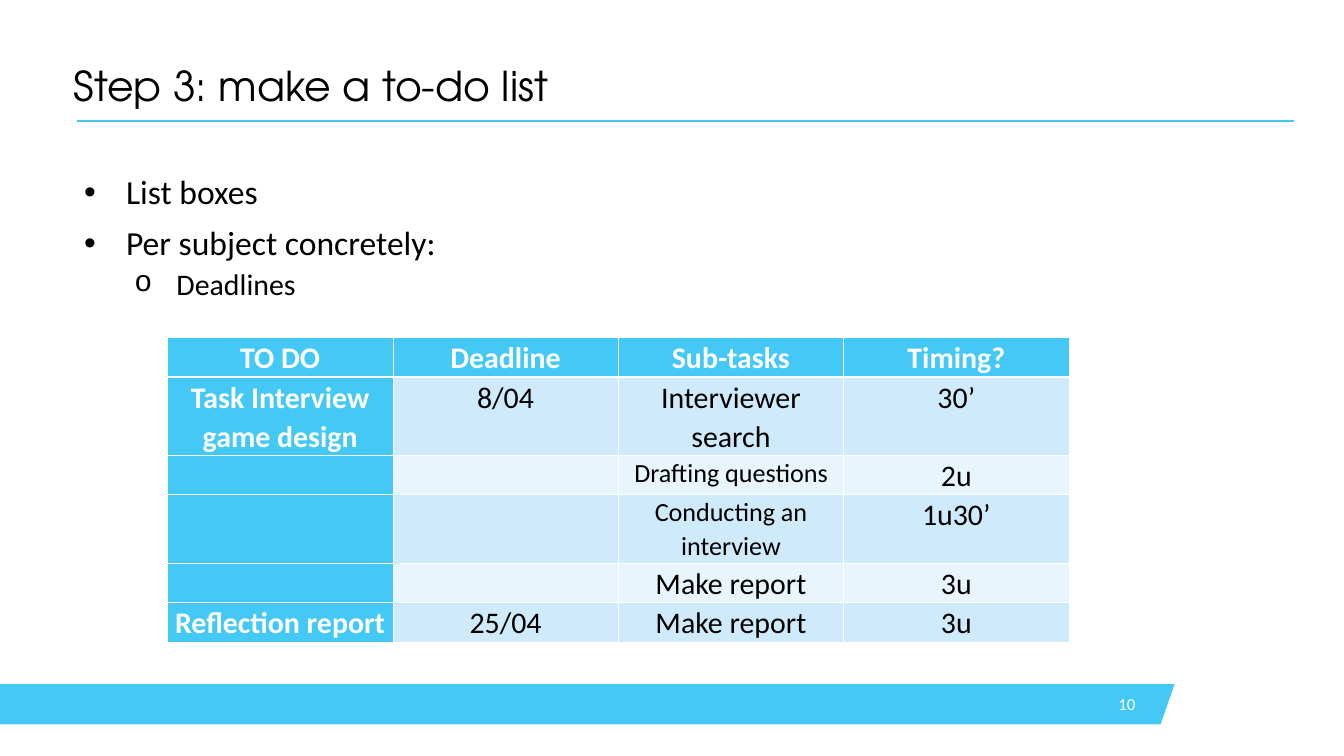
import pptx
import pptx.util
import pptx.dml.color
import pptx.enum.shapes
import pptx.enum.text
import pptx.oxml
import pptx.oxml.ns
from lxml import etree

Pt = pptx.util.Pt
PP_ALIGN = pptx.enum.text.PP_ALIGN
ANCHOR = pptx.enum.text.MSO_ANCHOR
COLORS = {"accent": "44C8F5", "band_dark": "CFEBFB", "band_light": "E9F5FD",
          "text": "000000", "white": "FFFFFF"}
BODY_FONT = "Calibri"
TITLE_FONT = "TeX Gyre Adventor"
BULLETS = [("List boxes", 0), ("Per subject concretely:", 0), ("Deadlines", 1)]
TODO = [
    ["TO DO", "Deadline", "Sub-tasks", "Timing?"],
    ["Task Interview game design", "8/04", "Interviewer search", "30’"],
    ["", "", "Drafting questions", "2u"],
    ["", "", "Conducting an interview", "1u30’"],
    ["", "", "Make report", "3u"],
    ["Reflection report", "25/04", "Make report", "3u"],
]
ROW_HEIGHTS = [42, 84, 42, 74, 42, 42]
COL_WIDTH = 241.5
SMALL_CELLS = {(2, 2), (3, 2)}


def rgb(name):
    return pptx.dml.color.RGBColor.from_string(COLORS[name])


def add_run(p, text, size, color="text", font=BODY_FONT, bold=False):
    r = p.add_run()
    r.text = text
    r.font.name = font
    r.font.size = Pt(size)
    r.font.bold = bold
    r.font.color.rgb = rgb(color)


def add_title(s, text):
    sp = s.shapes.title
    sp.left, sp.top, sp.width, sp.height = Pt(78.5), Pt(70), Pt(1305), Pt(50)
    tf = sp.text_frame
    tf.margin_left = tf.margin_top = tf.margin_right = tf.margin_bottom = 0
    tf.auto_size = pptx.enum.text.MSO_AUTO_SIZE.NONE
    tf.vertical_anchor = ANCHOR.MIDDLE
    p = tf.paragraphs[0]
    p.alignment = PP_ALIGN.LEFT
    p.line_spacing = 0.9
    add_run(p, text, 44, font=TITLE_FONT)


def add_rule(s):
    line = s.shapes.add_connector(pptx.enum.shapes.MSO_CONNECTOR.STRAIGHT,
                                  Pt(82), Pt(129.6), Pt(1386), Pt(129.6))
    line.line.color.rgb = rgb("accent")
    line.line.width = Pt(2.25)
    etree.SubElement(line._element.spPr, pptx.oxml.ns.qn("a:effectLst"))


def add_footer_band(s):
    top, bottom = Pt(733), Pt(776)
    fb = s.shapes.build_freeform(0, top)
    fb.add_line_segments([(Pt(1258.5), top), (Pt(1243.5), bottom), (0, bottom)])
    sp = fb.convert_to_shape()
    sp.shadow.inherit = False
    sp.fill.solid()
    sp.fill.fore_color.rgb = rgb("accent")
    sp.line.fill.background()


def add_text_box(s, left, top, width, height):
    tf = s.shapes.add_textbox(Pt(left), Pt(top), Pt(width), Pt(height)).text_frame
    tf.word_wrap = True
    return tf


def add_bullets(s, items):
    tf = add_text_box(s, 83, 185, 1305, 150)
    for i, (text, level) in enumerate(items):
        p = tf.paragraphs[0] if i == 0 else tf.add_paragraph()
        p.level = level
        p.line_spacing = 0.9
        p.space_before = Pt(0 if i == 0 else (15, 7.5)[level])
        pPr = p._p.get_or_add_pPr()
        pPr.set("marL", str(Pt((45, 99)[level])))
        pPr.set("indent", str(Pt(-45)))
        font = etree.SubElement(pPr, pptx.oxml.ns.qn("a:buFont"))
        font.set("typeface", ("Arial", "Courier New")[level])
        bullet = etree.SubElement(pPr, pptx.oxml.ns.qn("a:buChar"))
        bullet.set("char", "•o"[level])
        add_run(p, text, (36, 32)[level])


def add_page_number(s, text):
    tf = add_text_box(s, 1145, 733, 78.5, 43)
    tf.vertical_anchor = ANCHOR.MIDDLE
    p = tf.paragraphs[0]
    p.alignment = PP_ALIGN.RIGHT
    add_run(p, text, 18, "white")


def set_borders(cell, widths):
    tcPr = cell._tc.get_or_add_tcPr()
    for side, width in widths.items():
        ln = etree.SubElement(tcPr, pptx.oxml.ns.qn(f"a:ln{side}"), w=str(Pt(width)))
        fill = etree.SubElement(ln, pptx.oxml.ns.qn("a:solidFill"))
        etree.SubElement(fill, pptx.oxml.ns.qn("a:srgbClr"), val=COLORS["white"])


def format_cell(cell, text, row, col):
    heading = row == 0 or col == 0
    set_borders(cell, {"L": 1, "R": 1, "T": 3 if row == 1 else 1, "B": 3 if row == 0 else 1})
    cell.fill.solid()
    band = "band_dark" if row % 2 else "band_light"
    cell.fill.fore_color.rgb = rgb("accent" if heading else band)
    cell.margin_left = cell.margin_right = Pt(5)
    cell.margin_top = cell.margin_bottom = 0
    if text:
        p = cell.text_frame.paragraphs[0]
        p.alignment = PP_ALIGN.CENTER
        p.line_spacing = 1.07
        p.space_after = Pt(8)
        size = 28 if (row, col) in SMALL_CELLS else 32
        add_run(p, text, size, "white" if heading else "text", bold=heading)


def add_todo_table(s):
    cols = len(TODO[0])
    frame = s.shapes.add_table(len(TODO), cols, Pt(179.5), Pt(362),
                               Pt(COL_WIDTH * cols), Pt(sum(ROW_HEIGHTS)))
    table = frame.table
    table.first_col = True
    for column in table.columns:
        column.width = Pt(COL_WIDTH)
    for i, (height, texts) in enumerate(zip(ROW_HEIGHTS, TODO)):
        table.rows[i].height = Pt(height)
        for j, text in enumerate(texts):
            format_cell(table.cell(i, j), text, i, j)


def main():
    prs = pptx.Presentation()
    prs.slide_width, prs.slide_height = Pt(1440), Pt(810)
    s = prs.slides.add_slide(prs.slide_layouts[5])
    add_footer_band(s)
    add_rule(s)
    add_title(s, "Step 3: make a to-do list")
    add_bullets(s, BULLETS)
    add_page_number(s, "10")
    add_todo_table(s)
    prs.save("out.pptx")


if __name__ == "__main__":
    main()
